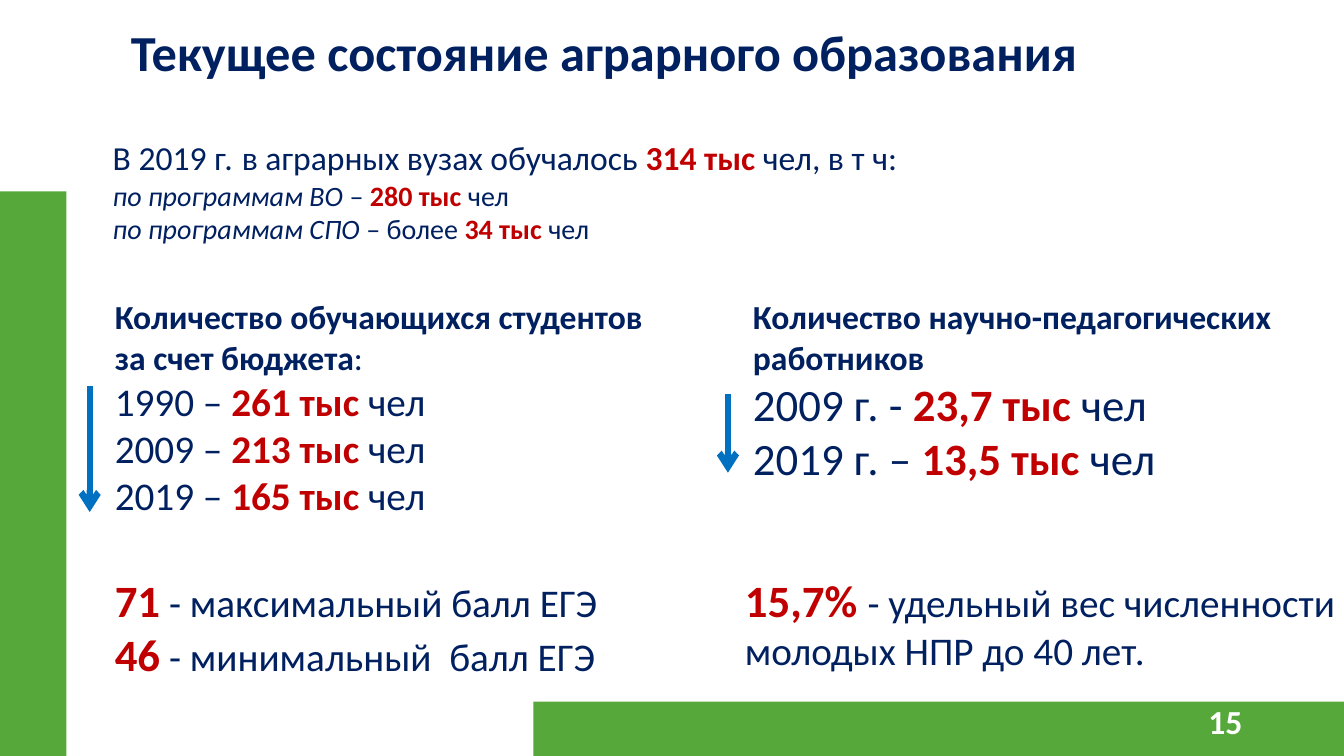
from lxml import etree
from pptx import Presentation
from pptx.dml.color import RGBColor
from pptx.enum.shapes import MSO_CONNECTOR, MSO_SHAPE
from pptx.enum.text import MSO_ANCHOR, PP_ALIGN
from pptx.oxml.ns import qn
from pptx.util import Inches, Pt

STRAIGHT = MSO_CONNECTOR.STRAIGHT
RECTANGLE = MSO_SHAPE.RECTANGLE
TOP, MIDDLE = MSO_ANCHOR.TOP, MSO_ANCHOR.MIDDLE
LEFT, RIGHT = PP_ALIGN.LEFT, PP_ALIGN.RIGHT

FONT = "Calibri"
GREEN, BLUE = "55A839", "0070C0"
STYLES = {
    "plain": ("002060", False, False),
    "strong": ("002060", True, False),
    "italic": ("002060", False, True),
    "figure": ("C00000", True, False),
    "number": ("FFFFFF", True, False),
}


def color(value):
    return RGBColor.from_string(value)


def add_text(page, box, lines, anchor=TOP, align=LEFT, spacing=None):
    frame = page.shapes.add_textbox(*map(Inches, box)).text_frame
    frame.word_wrap = True
    frame.vertical_anchor = anchor
    for index, line in enumerate(lines):
        para = frame.add_paragraph() if index else frame.paragraphs[0]
        para.alignment = align
        if spacing:
            para.line_spacing = spacing
        for text, size, style in line:
            span = para.add_run()
            span.text = text
            span.font.name = FONT
            span.font.size = Pt(size)
            value, span.font.bold, span.font.italic = STYLES[style]
            span.font.color.rgb = color(value)


def add_bar(page, box):
    bar = page.shapes.add_shape(RECTANGLE, *map(Inches, box))
    bar.shadow.inherit = False
    bar.fill.solid()
    bar.fill.fore_color.rgb = color(GREEN)
    bar.line.fill.background()


def add_down_arrow(page, x, top, bottom):
    arrow = page.shapes.add_connector(STRAIGHT, *map(Inches, (x, top, x, bottom)))
    arrow.line.color.rgb = color(BLUE)
    arrow.line.width = Pt(4.5)
    properties = arrow.line._get_or_add_ln()
    etree.SubElement(properties, qn("a:tailEnd"), type="arrow")
    etree.SubElement(arrow._element.spPr, qn("a:effectLst"))


def add_frame(page):
    add_bar(page, (5.29, 6.96, 8.04, 0.54))
    add_bar(page, (0, 1.9, 0.66, 5.6))
    add_text(page, (9.42, 6.95, 3, 0.4), [[("15", 24, "number")]], MIDDLE, RIGHT)


def add_intro(page, box):
    add_text(page, box, [
        [("В 2019 г.", 24, "plain"), (" ", 28, "plain"),
         ("в аграрных вузах обучалось ", 24, "plain"),
         ("314 тыс ", 24, "figure"), ("чел, в т ч:", 24, "plain")],
        [("по программам ВО ", 20, "italic"), ("– ", 20, "plain"),
         ("280 тыс ", 20, "figure"), ("чел", 20, "plain")],
        [("по программам СПО ", 20, "italic"), ("– более ", 20, "plain"),
         ("34 тыс ", 20, "figure"), ("чел", 20, "plain")],
    ])


def add_trend(page, box, heading, size, rows, arrow_span):
    left, top = box[:2]
    lines = [heading]
    for year, amount in rows:
        lines.append([(year, size, "plain"), (amount, size, "figure"), ("чел", size, "plain")])
    add_text(page, box, lines)
    start, end = arrow_span
    add_down_arrow(page, left - 0.15, top + start, top + end)


def add_facts(page, box, facts):
    add_text(page, box, [
        [(value, 32, "figure"), (label, 28, "plain")] for value, label in facts
    ])


def main():
    deck = Presentation()
    deck.slide_width, deck.slide_height = Inches(13.33), Inches(7.5)
    page = deck.slides.add_slide(deck.slide_layouts[6])
    add_frame(page)
    add_text(page, (1.2, 0.23, 12.13, 1.41),
             [[("Текущее состояние аграрного образования", 36, "strong")]], spacing=0.9)
    add_intro(page, (1.02, 1.25, 11.97, 1.78))
    add_trend(
        page, (1.04, 2.89, 5.7, 2.32),
        [("Количество обучающихся студентов за счет бюджета", 24, "strong"), (":", 24, "plain")],
        28, [("1990 – ", "261 тыс "), ("2009 – ", "213 тыс "), ("2019 – ", "165 тыс ")],
        (0.94, 2.19))
    add_trend(
        page, (7.37, 2.89, 6.16, 1.99),
        [("Количество научно-педагогических работников", 24, "strong")],
        32, [("2009 г. - ", "23,7 тыс "), ("2019 г. – ", "13,5 тыс ")],
        (1.02, 1.8))
    add_facts(page, (1.04, 5.63, 5.84, 1.18),
              [("71", " - максимальный балл ЕГЭ"), ("46", " - минимальный  балл ЕГЭ")])
    add_facts(page, (7.29, 5.63, 6.17, 1.11),
              [("15,7% ", "- удельный вес численности молодых НПР до 40 лет.")])
    deck.save("out.pptx")


if __name__ == "__main__":
    main()
